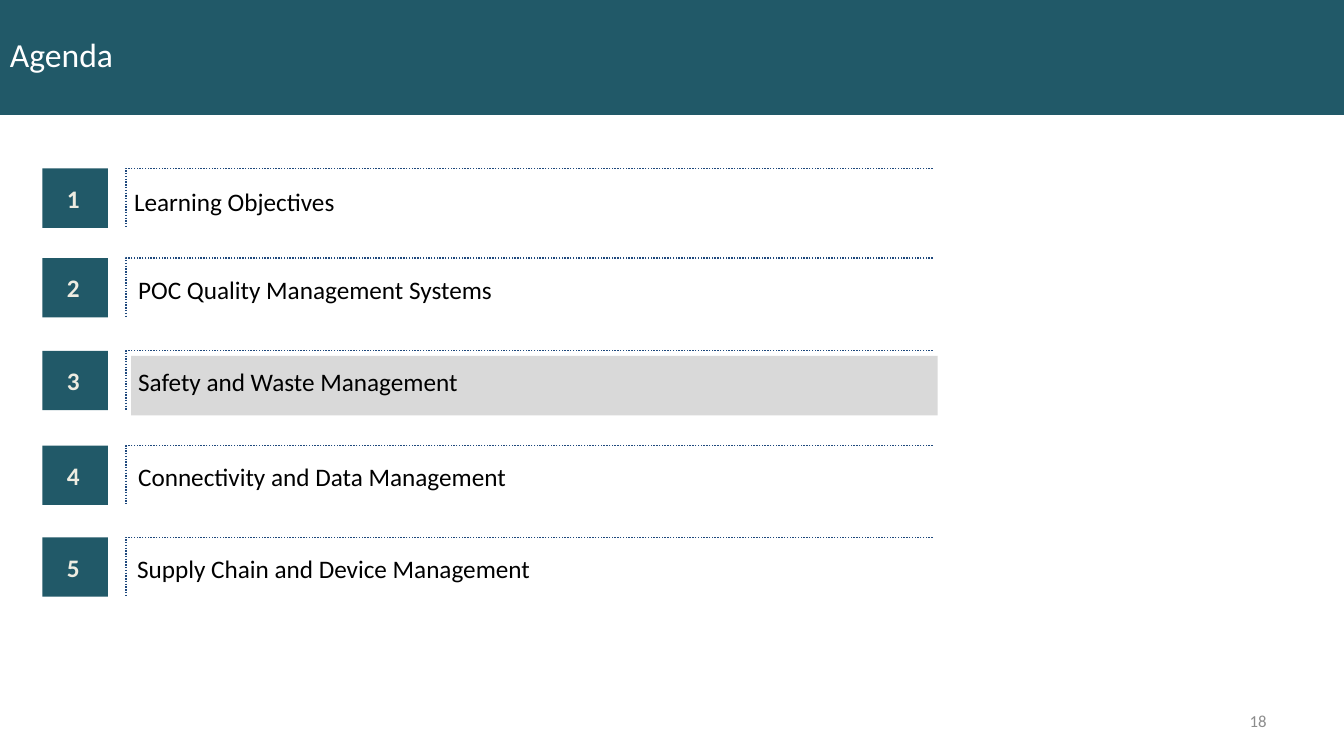
from pptx import Presentation
from pptx.dml.color import RGBColor
from pptx.enum.dml import MSO_LINE
from pptx.enum.shapes import MSO_SHAPE
from pptx.enum.text import MSO_ANCHOR, PP_ALIGN
from pptx.util import Inches, Pt

RECTANGLE = MSO_SHAPE.RECTANGLE
DOTTED = MSO_LINE.ROUND_DOT
TOP, MIDDLE = MSO_ANCHOR.TOP, MSO_ANCHOR.MIDDLE
LEFT, CENTER, RIGHT = PP_ALIGN.LEFT, PP_ALIGN.CENTER, PP_ALIGN.RIGHT

FONT = "Calibri"
TEAL, NAVY, GREY = "215968", "1F497D", "D9D9D9"
BLACK, WHITE, CREAM, PALE = "000000", "FFFFFF", "EEECE1", "8C8C8C"

ROW_HEIGHT = 0.59
RULE_LEFT, RULE_WIDTH = 1.25, 8

# Number, topic, top of the row, left of the topic
AGENDA = [
    ("1", "Learning Objectives", 1.67, 1.33),
    ("2", "POC Quality Management Systems", 2.56, 1.37),
    ("3", "Safety and Waste Management", 3.48, 1.37),
    ("4", "Connectivity and Data Management", 4.42, 1.37),
    ("5", "Supply Chain and Device Management", 5.33, 1.36),
]


def color(hex_value):
    return RGBColor.from_string(hex_value)


def set_text(shape, text, size, hex_value, align=LEFT, anchor=MIDDLE,
             bold=False, insets=(0.1, 0.05, 0.1, 0.05)):
    frame = shape.text_frame
    frame.word_wrap = True
    frame.vertical_anchor = anchor
    (frame.margin_left, frame.margin_top,
     frame.margin_right, frame.margin_bottom) = map(Inches, insets)
    para = frame.paragraphs[0]
    para.text = text
    para.alignment = align
    para.font.name = FONT
    para.font.size = Pt(size)
    para.font.bold = bold
    para.font.color.rgb = color(hex_value)
    return para


def add_box(shapes, left, top, width, height, fill):
    box = shapes.add_shape(RECTANGLE, Inches(left), Inches(top),
                           Inches(width), Inches(height))
    box.shadow.inherit = False
    box.fill.solid()
    box.fill.fore_color.rgb = color(fill)
    box.line.fill.background()
    return box


def add_label(shapes, left, top, width, height, text, size, hex_value, **style):
    label = shapes.add_textbox(Inches(left), Inches(top),
                               Inches(width), Inches(height))
    return set_text(label, text, size, hex_value, **style)


def add_corner_rule(shapes, top):
    left, right = Inches(RULE_LEFT), Inches(RULE_LEFT + RULE_WIDTH)
    start, end = Inches(top), Inches(top + ROW_HEIGHT)
    builder = shapes.build_freeform(right, start)
    builder.add_line_segments([(left, start), (left, end)], close=False)
    rule = builder.convert_to_shape()
    rule.shadow.inherit = False
    rule.fill.background()
    rule.line.color.rgb = color(NAVY)
    rule.line.width = Pt(1)
    rule.line.dash_style = DOTTED


def add_agenda_row(page, number, topic, top, topic_left):
    row = page.shapes.add_group_shape().shapes
    badge = add_box(row, 0.42, top, 0.65, ROW_HEIGHT, TEAL)
    set_text(badge, number, 18, CREAM, align=CENTER, bold=True,
             insets=(0.06, 0.05, 0.1, 0.05))
    para = add_label(row, topic_left, top + 0.18, 7.44, 0.29, topic, 18, BLACK,
                     anchor=TOP, insets=(0, 0, 0, 0))
    # The first topic keeps single spacing
    para.line_spacing = 1.0 if number == "1" else 0.95
    add_corner_rule(row, top)


def main():
    deck = Presentation()
    deck.slide_width, deck.slide_height = Inches(13.33), Inches(7.5)
    page = deck.slides.add_slide(deck.slide_layouts[6])

    # Title band
    add_box(page.shapes, 0, -0.03, 13.33, 1.17, TEAL)
    add_label(page.shapes, 0, 0, 13.29, 1.08, "Agenda", 24, WHITE)

    # Highlight behind the current topic
    add_box(page.shapes, 1.3, 3.53, RULE_WIDTH, ROW_HEIGHT, GREY)

    # Agenda rows
    for number, topic, top, topic_left in AGENDA:
        add_agenda_row(page, number, topic, top, topic_left)

    # Page number
    add_label(page.shapes, 9.55, 6.95, 3.11, 0.4, "18", 12, PALE, align=RIGHT)

    deck.save("out.pptx")


if __name__ == "__main__":
    main()
